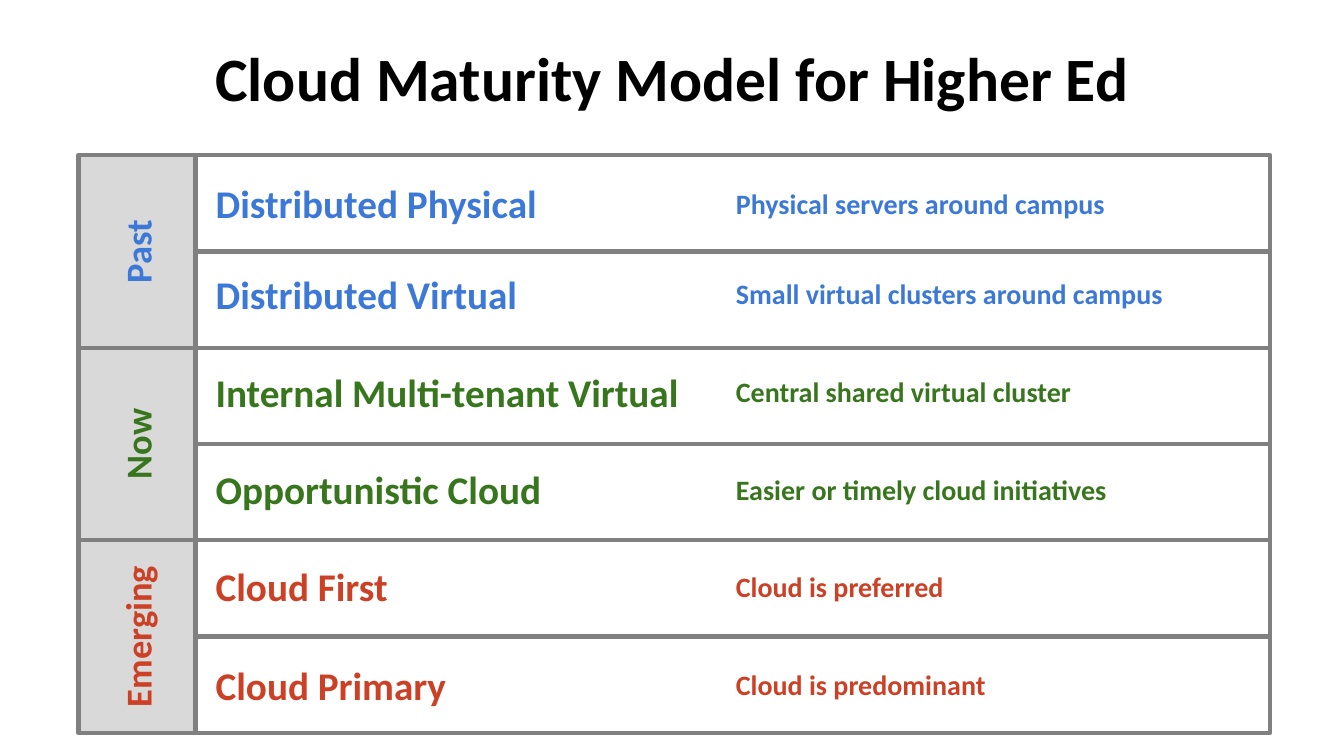
from pptx import Presentation
from pptx.dml.color import RGBColor
from pptx.enum.shapes import MSO_SHAPE
from pptx.enum.text import MSO_ANCHOR, PP_ALIGN
from pptx.util import Inches, Pt

BLACK = RGBColor(0x00, 0x00, 0x00)
BLUE = RGBColor(0x3C, 0x78, 0xD8)
GREEN = RGBColor(0x38, 0x76, 0x1D)
RED = RGBColor(0xCC, 0x41, 0x25)
BAND = RGBColor(0xD9, 0xD9, 0xD9)
BORDER = RGBColor(0x80, 0x80, 0x80)

LABEL_W = 1.16
TEXT_H = 0.69

STAGES = [
    ("Past", BLUE, [
        ("Distributed Physical", "Physical servers around campus", 0.13),
        ("Distributed Virtual", "Small virtual clusters around campus", 0.07),
    ]),
    ("Now", GREEN, [
        ("Internal Multi-tenant Virtual", "Central shared virtual cluster", 0.09),
        ("Opportunistic Cloud", "Easier or timely cloud initiatives", 0.1),
    ]),
    ("Emerging", RED, [
        ("Cloud First", "Cloud is preferred", 0.11),
        ("Cloud Primary", "Cloud is predominant", 0.13),
    ]),
]


def add_text(slide, text, x, y, w, h, size=28, color=BLACK,
             align=PP_ALIGN.LEFT, rotation=0):
    sp = slide.shapes.add_textbox(Inches(x), Inches(y), Inches(w), Inches(h))
    sp.rotation = rotation
    tf = sp.text_frame
    tf.word_wrap = True
    tf.vertical_anchor = MSO_ANCHOR.MIDDLE
    tf.margin_left = tf.margin_right = Inches(0.1)
    tf.margin_top = tf.margin_bottom = Inches(0.1)
    p = tf.paragraphs[0]
    p.alignment = align
    r = p.add_run()
    r.text = text
    r.font.name = "Calibri"
    r.font.size = Pt(size)
    r.font.bold = True
    r.font.color.rgb = color


def add_box(slide, x, y, w, h, fill=None):
    sp = slide.shapes.add_shape(
        MSO_SHAPE.RECTANGLE, Inches(x), Inches(y), Inches(w), Inches(h))
    sp.shadow.inherit = False
    if fill is None:
        sp.fill.background()
    else:
        sp.fill.solid()
        sp.fill.fore_color.rgb = fill
    sp.line.color.rgb = BORDER
    sp.line.width = Pt(3)


def add_level(slide, x, y, w, h, level, color):
    name, detail, offset = level
    add_box(slide, x, y, w, h)
    add_text(slide, name, x + 0.1, y + offset, 5.31, TEXT_H, color=color)
    add_text(slide, detail, x + 5.26, y + offset, 5.28, TEXT_H,
             size=20, color=color)


def add_stage(slide, x, y, w, h, label, color, levels):
    add_box(slide, x, y, LABEL_W, h, fill=BAND)
    add_text(slide, label, x + (LABEL_W - h) / 2, y + (h - TEXT_H) / 2,
             h, TEXT_H, size=26, color=color, align=PP_ALIGN.CENTER,
             rotation=270)
    row_h = h / len(levels)
    for i, level in enumerate(levels):
        add_level(slide, x + LABEL_W, y + i * row_h, w - LABEL_W, row_h,
                  level, color)


def add_model(slide, x, y, w, h):
    stage_h = h / len(STAGES)
    for i, stage in enumerate(STAGES):
        add_stage(slide, x, y + i * stage_h, w, stage_h, *stage)


def main():
    prs = Presentation()
    prs.slide_width = Inches(13.33)
    prs.slide_height = Inches(7.5)
    s = prs.slides.add_slide(prs.slide_layouts[6])
    add_text(s, "Cloud Maturity Model for Higher Ed", 0.67, 0.3, 12, 0.93,
             size=44, align=PP_ALIGN.CENTER)
    add_model(s, 0.78, 1.54, 11.82, 5.73)
    prs.save("out.pptx")


if __name__ == "__main__":
    main()
